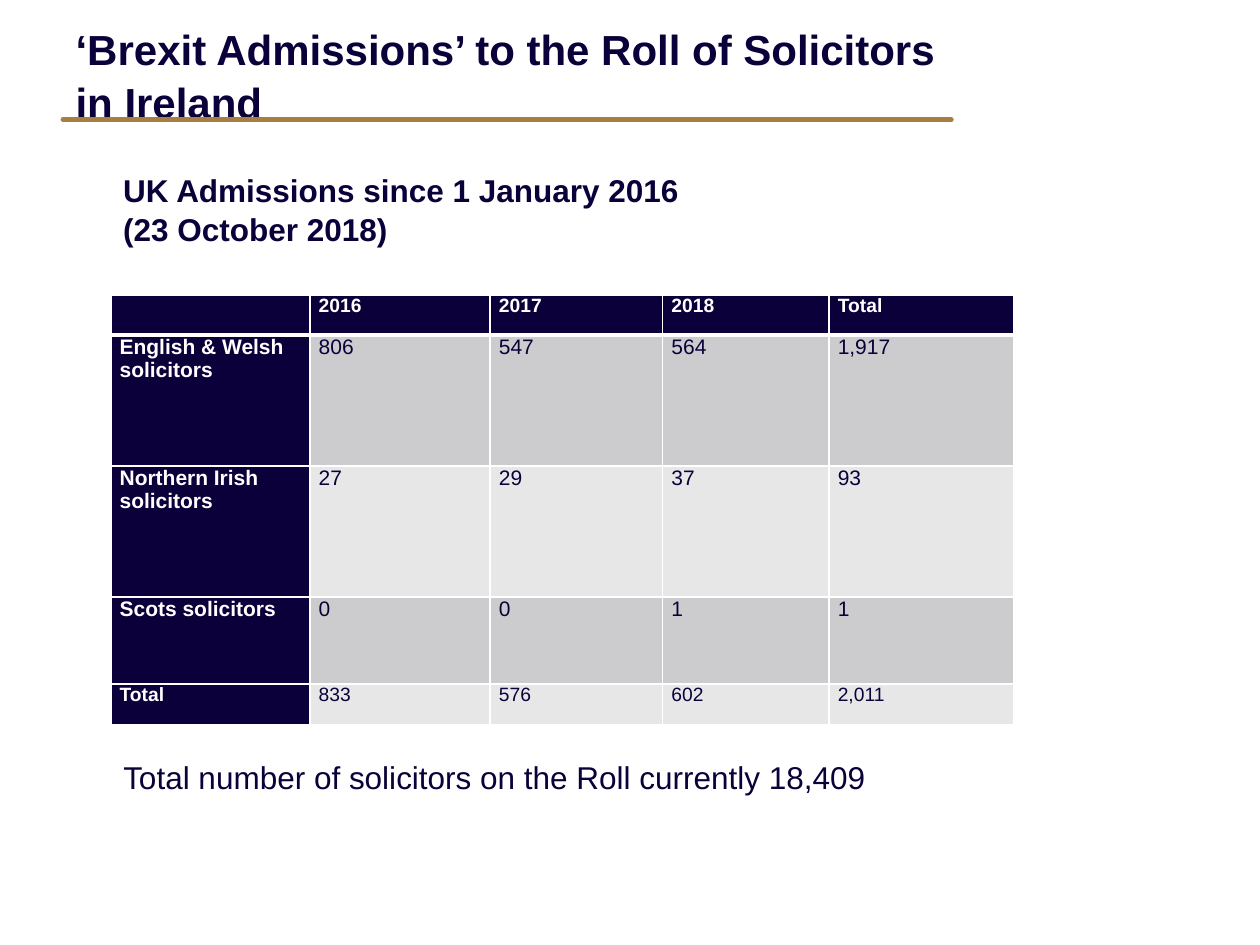
from lxml import etree
from pptx import Presentation
from pptx.dml.color import RGBColor
from pptx.enum.shapes import MSO_CONNECTOR
from pptx.enum.text import MSO_ANCHOR, PP_ALIGN
from pptx.oxml.ns import qn
from pptx.util import Inches, Pt

STRAIGHT = MSO_CONNECTOR.STRAIGHT
TOP = MSO_ANCHOR.TOP
LEFT = PP_ALIGN.LEFT

FONT = "Arial"
NAVY = "0B0039"
GOLD = "A67F42"
WHITE = "FFFFFF"
BANDS = ("CCCCCE", "E7E7E8")

COLUMN_WIDTHS = (1.58, 1.43, 1.37, 1.32, 1.47)
ROW_HEIGHTS = (0.32, 1.04, 1.04, 0.69, 0.32)
ROW_SIZES = (11, 12, 12, 12, 11)
ADMISSIONS = (
    ("", "2016", "2017", "2018", "Total"),
    ("English & Welsh solicitors", "806", "547", "564", "1,917"),
    ("Northern Irish solicitors", "27", "29", "37", "93"),
    ("Scots solicitors", "0", "0", "1", "1"),
    ("Total", "833", "576", "602", "2,011"),
)


def color(value):
    """Turn a hex string into a colour."""
    return RGBColor.from_string(value)


def place(shape, left, top, width, height):
    """Set the position and size of a shape in inches."""
    shape.left, shape.top = Inches(left), Inches(top)
    shape.width, shape.height = Inches(width), Inches(height)


def add_span(para, text, size, fill, bold):
    """Add one formatted run to a paragraph."""
    span = para.add_run()
    span.text = text
    span.font.name = FONT
    span.font.size = Pt(size)
    span.font.bold = bold
    span.font.color.rgb = color(fill)


def write_lines(frame, lines, size, bold):
    """Write navy left-aligned paragraphs into a text frame."""
    frame.word_wrap = True
    frame.vertical_anchor = TOP
    for index, line in enumerate(lines):
        para = frame.paragraphs[0] if index == 0 else frame.add_paragraph()
        para.alignment = LEFT
        para.line_spacing = 1.05
        para.space_before = Pt(0)
        add_span(para, line, size, NAVY, bold)


def add_text(slide, area, lines, bold):
    """Add a text box."""
    box = slide.shapes.add_textbox(*map(Inches, area))
    write_lines(box.text_frame, lines, 18, bold)


def add_rule(slide):
    """Draw the round-ended gold rule under the title."""
    rule = slide.shapes.add_connector(
        STRAIGHT, Inches(0.5), Inches(0.95), Inches(7.55), Inches(0.95)
    )
    rule.line.color.rgb = color(GOLD)
    rule.line.width = Pt(2.75)
    properties = rule._element.spPr
    properties.find(qn("a:ln")).set("cap", "rnd")
    etree.SubElement(properties, qn("a:effectLst"))


def set_borders(cell, bottom_width):
    """Give a cell white borders, with its own bottom width."""
    properties = cell._tc.get_or_add_tcPr()
    widths = (("lnL", 1), ("lnR", 1), ("lnT", 1), ("lnB", bottom_width))
    for index, (side, width) in enumerate(widths):
        border = etree.Element(qn(f"a:{side}"), w=str(Pt(width)))
        fill = etree.SubElement(border, qn("a:solidFill"))
        etree.SubElement(fill, qn("a:srgbClr"), val=WHITE)
        properties.insert(index, border)


def fill_cell(cell, text, row, column):
    """Format one table cell by its row and column."""
    heading = row == 0 or column == 0
    cell.margin_left = cell.margin_right = Inches(0.07)
    cell.margin_top = cell.margin_bottom = 0
    cell.vertical_anchor = TOP
    cell.fill.solid()
    cell.fill.fore_color.rgb = color(NAVY if heading else BANDS[(row - 1) % 2])
    set_borders(cell, 3 if row == 0 else 1)
    if text:
        para = cell.text_frame.paragraphs[0]
        add_span(para, text, ROW_SIZES[row], WHITE if heading else NAVY, heading)


def add_admissions_table(slide):
    """Add the table of admissions by year."""
    frame = slide.shapes.add_table(
        len(ROW_HEIGHTS), len(COLUMN_WIDTHS), Inches(0.88), Inches(2.34),
        Inches(sum(COLUMN_WIDTHS)), Inches(sum(ROW_HEIGHTS)),
    )
    table = frame.table
    for column, width in zip(table.columns, COLUMN_WIDTHS):
        column.width = Inches(width)
    for row, height in zip(table.rows, ROW_HEIGHTS):
        row.height = Inches(height)
    for row, texts in enumerate(ADMISSIONS):
        for column, text in enumerate(texts):
            fill_cell(table.cell(row, column), text, row, column)


def main():
    """Build and save the slide."""
    deck = Presentation()
    deck.slide_width, deck.slide_height = Inches(10), Inches(7.5)
    slide = deck.slides.add_slide(deck.slide_layouts[5])
    add_rule(slide)
    title = slide.shapes.title
    place(title, 0.5, 0.12, 7.36, 1.02)
    heading = "‘Brexit Admissions’ to the Roll of Solicitors in Ireland"
    write_lines(title.text_frame, [heading], 24, True)
    add_admissions_table(slide)
    subtitle = ["UK Admissions since 1 January 2016", "(23 October 2018)"]
    add_text(slide, (0.88, 1.29, 5, 0.71), subtitle, True)
    total = "Total number of solicitors on the Roll currently 18,409"
    add_text(slide, (0.88, 5.95, 6.59, 0.4), [total], False)
    deck.save("out.pptx")


if __name__ == "__main__":
    main()
